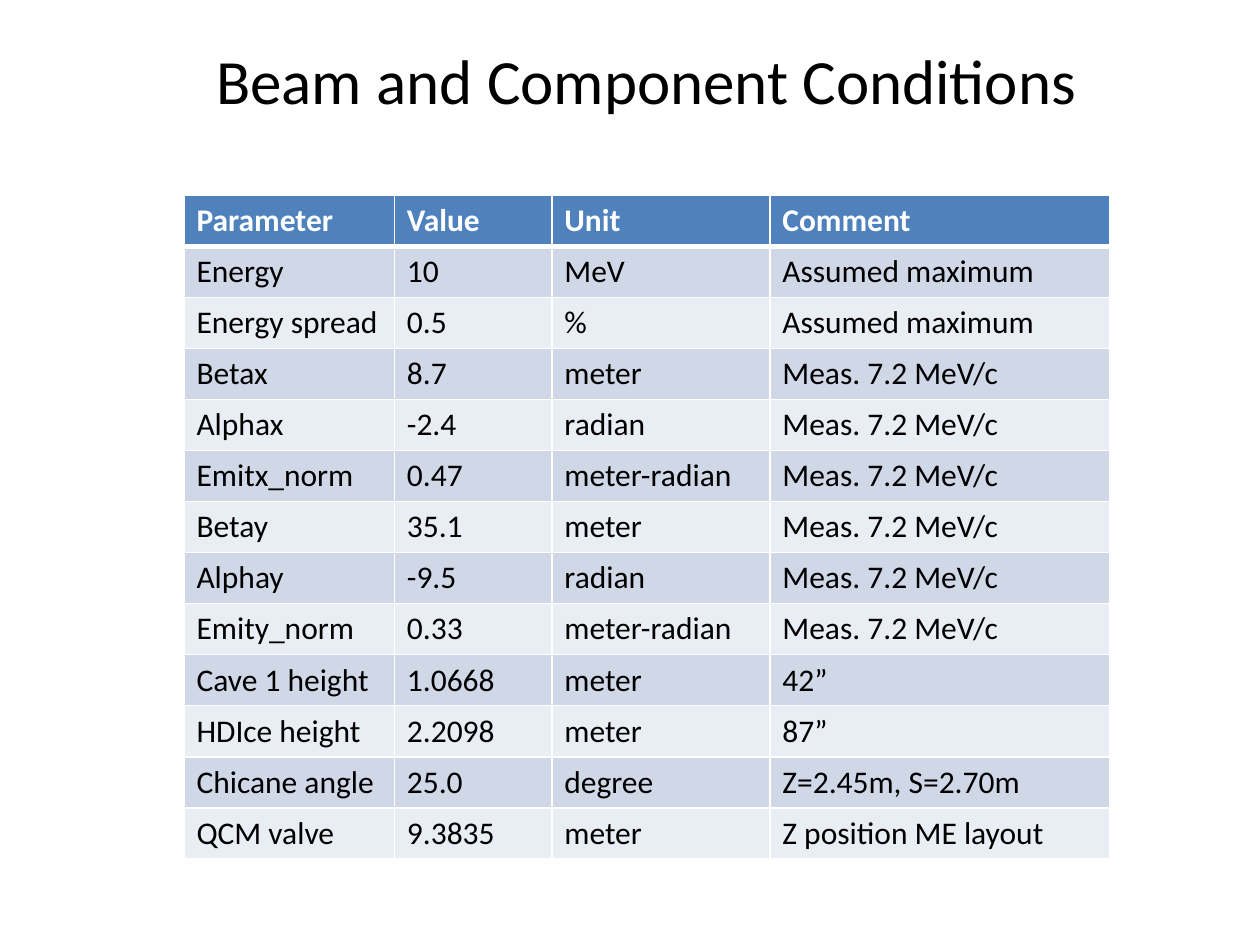
import dataclasses

import pptx
import pptx.dml.color
import pptx.enum.text
import pptx.oxml
import pptx.oxml.ns
import pptx.util

Inches = pptx.util.Inches


@dataclasses.dataclass(frozen=True)
class Theme:
    font: str = "Calibri"
    title_size: int = 36
    cell_size: int = 18
    text: str = "000000"
    header_text: str = "FFFFFF"
    header_fill: str = "4F81BD"
    bands: tuple = ("D0D8E8", "E9EDF4")
    border: str = "FFFFFF"
    thin: int = 1
    thick: int = 3


class Deck:
    def __init__(self, prs, theme):
        self.theme = theme
        self.s = prs.slides.add_slide(prs.slide_layouts[5])

    def style(self, p, size, color, bold=False):
        p.font.name = self.theme.font
        p.font.size = pptx.util.Pt(size)
        p.font.bold = bold
        p.font.color.rgb = pptx.dml.color.RGBColor.from_string(color)

    def title(self, text, left, top, width, height):
        sp = self.s.shapes.title
        sp.left, sp.top = Inches(left), Inches(top)
        sp.width, sp.height = Inches(width), Inches(height)
        tf = sp.text_frame
        tf.text = text
        tf.word_wrap = False
        tf.vertical_anchor = pptx.enum.text.MSO_ANCHOR.TOP
        tf.auto_size = pptx.enum.text.MSO_AUTO_SIZE.SHAPE_TO_FIT_TEXT
        p = tf.paragraphs[0]
        p.alignment = pptx.enum.text.PP_ALIGN.CENTER
        self.style(p, self.theme.title_size, self.theme.text)

    def border(self, cell, side, width):
        ns = pptx.oxml.ns.nsdecls("a")
        cell._tc.get_or_add_tcPr().append(pptx.oxml.parse_xml(
            f'<a:{side} {ns} w="{pptx.util.Pt(width)}"><a:solidFill>'
            f'<a:srgbClr val="{self.theme.border}"/></a:solidFill></a:{side}>'))

    def cell(self, cell, text, row):
        t = self.theme
        header = row == 0
        widths = {"lnL": t.thin, "lnR": t.thin,
                  "lnT": t.thick if row == 1 else t.thin,
                  "lnB": t.thick if header else t.thin}
        for side, width in widths.items():
            self.border(cell, side, width)
        fill = t.header_fill if header else t.bands[(row - 1) % 2]
        cell.fill.solid()
        cell.fill.fore_color.rgb = pptx.dml.color.RGBColor.from_string(fill)
        cell.text = text
        color = t.header_text if header else t.text
        self.style(cell.text_frame.paragraphs[0], t.cell_size, color, header)

    def table(self, rows, left, top, col_widths, height):
        table = self.s.shapes.add_table(
            len(rows), len(col_widths), Inches(left), Inches(top),
            Inches(sum(col_widths)), Inches(height)).table
        for col, width in zip(table.columns, col_widths):
            col.width = Inches(width)
        for i, row in enumerate(rows):
            for j, text in enumerate(row):
                self.cell(table.cell(i, j), text, i)


MEASURED = "Meas. 7.2 MeV/c"
CONDITIONS = [
    ("Parameter", "Value", "Unit", "Comment"),
    ("Energy", "10", "MeV", "Assumed maximum"),
    ("Energy spread", "0.5", "%", "Assumed maximum"),
    ("Betax", "8.7", "meter", MEASURED),
    ("Alphax", "-2.4", "radian", MEASURED),
    ("Emitx_norm", "0.47", "meter-radian", MEASURED),
    ("Betay", "35.1", "meter", MEASURED),
    ("Alphay", "-9.5", "radian", MEASURED),
    ("Emity_norm", "0.33", "meter-radian", MEASURED),
    ("Cave 1 height", "1.0668", "meter", "42”"),
    ("HDIce height", "2.2098", "meter", "87”"),
    ("Chicane angle", "25.0", "degree", "Z=2.45m, S=2.70m"),
    ("QCM valve", "9.3835", "meter", "Z position ME layout"),
]


def main():
    prs = pptx.Presentation()
    prs.slide_width, prs.slide_height = Inches(10), Inches(7.5)
    deck = Deck(prs, Theme())
    deck.table(CONDITIONS, 1.46, 1.55, (1.67, 1.25, 1.73, 2.7), 5.27)
    deck.title("Beam and Component Conditions", 1.58, 0.28, 7.1, 0.71)
    prs.save("out.pptx")


if __name__ == "__main__":
    main()
